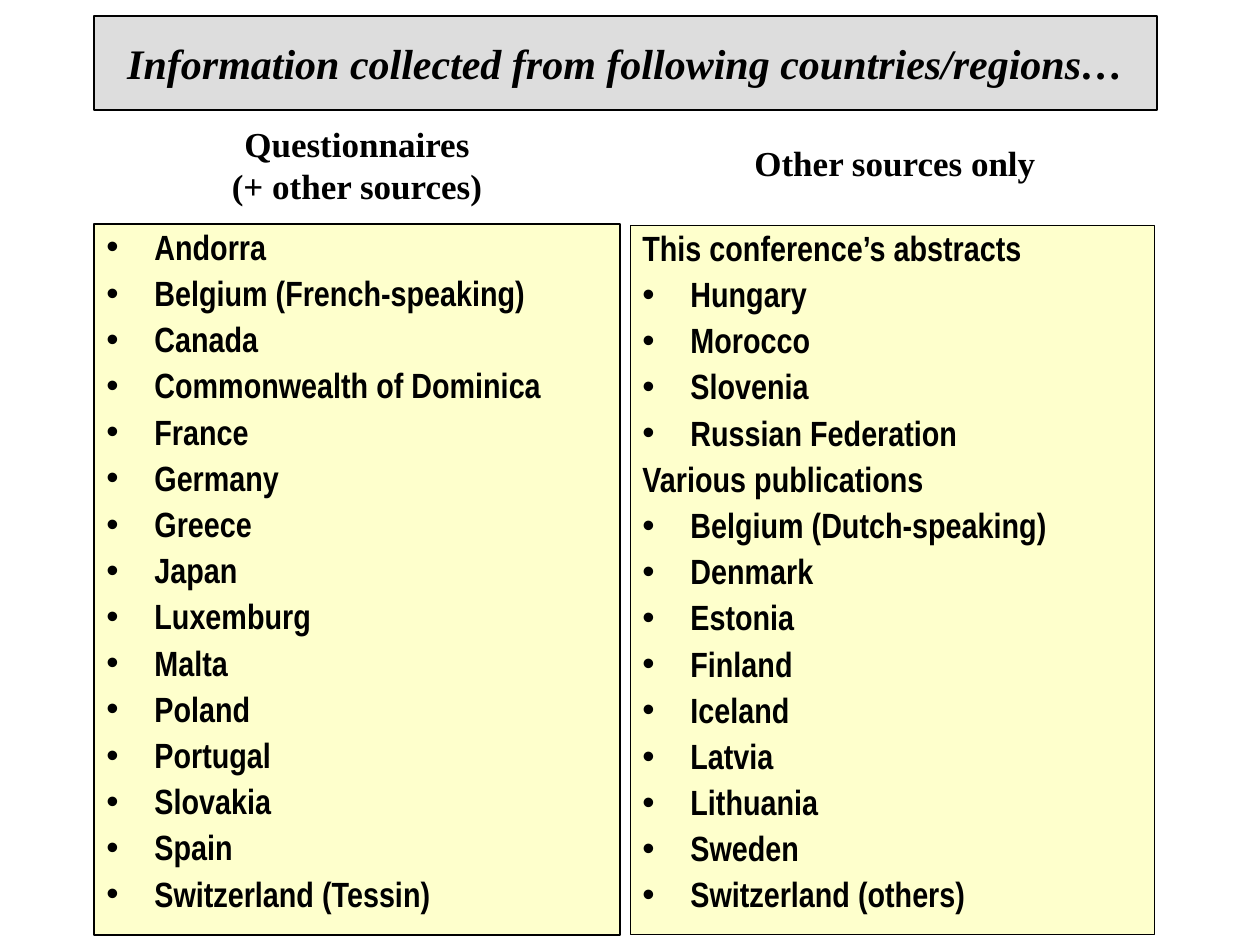
from dataclasses import dataclass

from lxml import etree
from pptx import Presentation
from pptx import util as u
from pptx.dml.color import RGBColor
from pptx.enum import shapes, text
from pptx.oxml.ns import qn

PX = u.Inches(1) // 126  # one px in EMU


@dataclass(frozen=True)
class Theme:
    ink: RGBColor = RGBColor(0x00, 0x00, 0x00)
    banner: RGBColor = RGBColor(0xDD, 0xDD, 0xDD)
    panel: RGBColor = RGBColor(0xFE, 0xFF, 0xCC)
    serif: str = "Times New Roman"
    narrow: str = "Arial Narrow"
    title_pt: int = 24
    body_pt: int = 20
    space_pt: float = 4.8


@dataclass(frozen=True)
class Box:
    x: int
    y: int
    w: int
    h: int

    def emu(self) -> tuple[int, ...]:
        return tuple(v * PX for v in (self.x, self.y, self.w, self.h))


@dataclass(frozen=True)
class Group:
    countries: list[str]
    label: str = ""


@dataclass(frozen=True)
class Column:
    heading: list[str]
    heading_box: Box
    panel_box: Box
    line_pt: float
    groups: list[Group]


THEME = Theme()

COLUMNS = [
    Column(
        ["Questionnaires", "(+ other sources)"],
        Box(94, 116, 526, 97), Box(94, 224, 526, 711), 0.75,
        [Group(["Andorra", "Belgium (French-speaking)", "Canada",
                "Commonwealth of Dominica", "France", "Germany", "Greece",
                "Japan", "Luxemburg", "Malta", "Poland", "Portugal",
                "Slovakia", "Spain", "Switzerland (Tessin)"])],
    ),
    Column(
        ["Other sources only"],
        Box(632, 135, 526, 55), Box(630, 225, 525, 710), 0.5,
        [Group(["Hungary", "Morocco", "Slovenia", "Russian Federation"],
               "This conference’s abstracts"),
         Group(["Belgium (Dutch-speaking)", "Denmark", "Estonia", "Finland",
                "Iceland", "Latvia", "Lithuania", "Sweden",
                "Switzerland (others)"],
               "Various publications")],
    ),
]


def add_run(p, words: str, font: str, size: int, italic: bool = False) -> None:
    r = p.add_run()
    r.text = words
    r.font.name, r.font.size = font, u.Pt(size)
    r.font.bold, r.font.italic = True, italic
    r.font.color.rgb = THEME.ink


def add_panel(s, box: Box, fill: RGBColor, line_pt: float, anchor):
    """Draw a bordered rectangle and return its text frame."""
    sp = s.shapes.add_shape(shapes.MSO_SHAPE.RECTANGLE, *box.emu())
    sp.shadow.inherit = False
    sp.fill.solid()
    sp.fill.fore_color.rgb = fill
    sp.line.color.rgb = THEME.ink
    sp.line.width = u.Pt(line_pt)
    tf = sp.text_frame
    tf.word_wrap = True
    tf.vertical_anchor = anchor
    return tf


def add_bullet(p) -> None:
    pPr = p._p.get_or_add_pPr()
    indent = 48 * PX
    pPr.set("marL", str(indent))
    pPr.set("indent", str(-indent))
    etree.SubElement(pPr, qn("a:buFont")).set("typeface", "Arial")
    etree.SubElement(pPr, qn("a:buChar")).set("char", "•")


def add_heading(s, lines: list[str], box: Box) -> None:
    tf = s.shapes.add_textbox(*box.emu()).text_frame
    tf.word_wrap = True
    p = tf.paragraphs[0]
    p.alignment = text.PP_ALIGN.CENTER
    for i, line in enumerate(lines):
        if i:
            p.add_line_break()
        add_run(p, line, THEME.serif, THEME.body_pt)


def add_column(s, column: Column) -> None:
    add_heading(s, column.heading, column.heading_box)
    tf = add_panel(s, column.panel_box, THEME.panel, column.line_pt,
                   text.MSO_ANCHOR.TOP)
    entries = []
    for group in column.groups:
        if group.label:
            entries.append((group.label, False))
        entries += [(country, True) for country in group.countries]
    for i, (words, bulleted) in enumerate(entries):
        p = tf.add_paragraph() if i else tf.paragraphs[0]
        p.alignment = text.PP_ALIGN.LEFT
        p.line_spacing = 0.9
        if i:
            p.space_before = u.Pt(THEME.space_pt)
        if bulleted:
            add_bullet(p)
        add_run(p, words, THEME.narrow, THEME.body_pt)


def main() -> None:
    prs = Presentation()
    prs.slide_width, prs.slide_height = 1260 * PX, 945 * PX
    s = prs.slides.add_slide(prs.slide_layouts[6])

    # Title banner
    tf = add_panel(s, Box(94, 16, 1063, 94), THEME.banner, 1.5,
                   text.MSO_ANCHOR.MIDDLE)
    p = tf.paragraphs[0]
    p.alignment = text.PP_ALIGN.CENTER
    add_run(p, "Information collected from following countries/regions…",
            THEME.serif, THEME.title_pt, italic=True)

    # Country lists
    for column in COLUMNS:
        add_column(s, column)

    prs.save("out.pptx")


if __name__ == "__main__":
    main()
